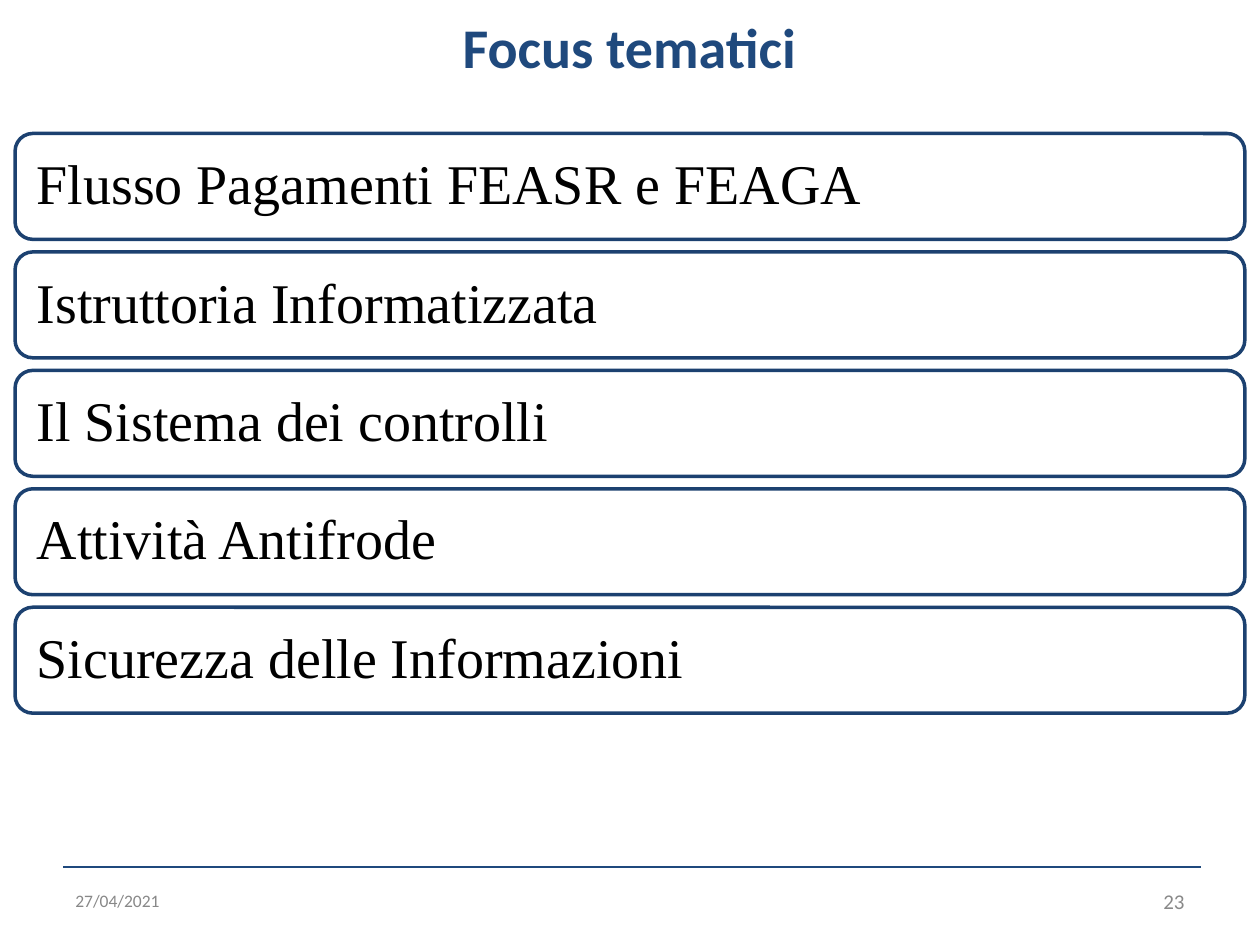
from dataclasses import dataclass

from lxml import etree
from pptx import Presentation
from pptx.dml.color import RGBColor
from pptx.enum.shapes import MSO_CONNECTOR, MSO_SHAPE
from pptx.enum.text import MSO_ANCHOR, MSO_AUTO_SIZE, PP_ALIGN
from pptx.oxml.ns import qn
from pptx.slide import Slide
from pptx.text.text import TextFrame
from pptx.util import Inches, Pt

LEFT, CENTER, RIGHT = PP_ALIGN.LEFT, PP_ALIGN.CENTER, PP_ALIGN.RIGHT
TOP, MIDDLE = MSO_ANCHOR.TOP, MSO_ANCHOR.MIDDLE

BLUE = RGBColor(0x1F, 0x49, 0x7D)
BORDER_BLUE = RGBColor(0x1C, 0x41, 0x70)
DATE_GRAY = RGBColor(0x88, 0x88, 0x88)
NUMBER_GRAY = RGBColor(0x89, 0x89, 0x89)
BLACK = RGBColor(0, 0, 0)
WHITE = RGBColor(0xFF, 0xFF, 0xFF)

TOPICS = [
    "Flusso Pagamenti FEASR e FEAGA",
    "Istruttoria Informatizzata",
    "Il Sistema dei controlli",
    "Attività Antifrode",
    "Sicurezza delle Informazioni",
]
TOPIC_LEFT, TOPIC_TOP = 0.12, 1.06
TOPIC_WIDTH, TOPIC_HEIGHT = 9.76, 0.84
TOPIC_PITCH = 0.94
TOPIC_INSET = 0.13


@dataclass(frozen=True)
class TextStyle:
    size: int
    color: RGBColor
    font: str = "Calibri"
    align: PP_ALIGN = LEFT
    anchor: MSO_ANCHOR = MIDDLE
    bold: bool = False


@dataclass(frozen=True)
class FooterItem:
    text: str
    left: float
    style: TextStyle


TITLE_STYLE = TextStyle(32, BLUE, align=CENTER, anchor=TOP, bold=True)
TOPIC_STYLE = TextStyle(32, BLACK, font="Times New Roman")
FOOTER_ITEMS = [
    FooterItem("27/04/2021", 0.5, TextStyle(10, DATE_GRAY)),
    FooterItem("23", 7.17, TextStyle(12, NUMBER_GRAY, align=RIGHT)),
]


def write_text(frame: TextFrame, text: str, style: TextStyle) -> None:
    frame.text = text
    frame.word_wrap = True
    frame.auto_size = MSO_AUTO_SIZE.NONE
    frame.vertical_anchor = style.anchor
    paragraph = frame.paragraphs[0]
    paragraph.alignment = style.align
    font = paragraph.runs[0].font
    font.name = style.font
    font.size = Pt(style.size)
    font.bold = style.bold
    font.color.rgb = style.color


def add_title(slide: Slide, text: str) -> None:
    title = slide.shapes.title
    title.left, title.top = Inches(0.1), Inches(0.05)
    title.width, title.height = Inches(9.79), Inches(0.81)
    write_text(title.text_frame, text, TITLE_STYLE)


def add_topic(slide: Slide, text: str, top: float) -> None:
    box = slide.shapes.add_shape(
        MSO_SHAPE.ROUNDED_RECTANGLE,
        Inches(TOPIC_LEFT), Inches(top), Inches(TOPIC_WIDTH), Inches(TOPIC_HEIGHT),
    )
    box.shadow.inherit = False
    box.fill.solid()
    box.fill.fore_color.rgb = WHITE
    box.line.color.rgb = BORDER_BLUE
    box.line.width = Pt(2)
    frame = box.text_frame
    frame.margin_left = frame.margin_right = Inches(TOPIC_INSET)
    frame.margin_top = frame.margin_bottom = Inches(TOPIC_INSET)
    write_text(frame, text, TOPIC_STYLE)
    frame.paragraphs[0].line_spacing = 0.9


def add_footer_rule(slide: Slide) -> None:
    rule = slide.shapes.add_connector(
        MSO_CONNECTOR.STRAIGHT, Inches(0.5), Inches(6.88), Inches(9.53), Inches(6.88)
    )
    rule.line.color.rgb = BLUE
    rule.line.width = Pt(1.5)
    etree.SubElement(rule._element.spPr, qn("a:effectLst"))


def add_footer_item(slide: Slide, item: FooterItem) -> None:
    box = slide.shapes.add_textbox(
        Inches(item.left), Inches(6.95), Inches(2.33), Inches(0.4)
    )
    write_text(box.text_frame, item.text, item.style)


def main() -> None:
    presentation = Presentation()
    presentation.slide_width = Inches(10)
    presentation.slide_height = Inches(7.5)
    title_only = presentation.slide_layouts[5]
    slide = presentation.slides.add_slide(title_only)

    add_title(slide, "Focus tematici")
    for row, topic in enumerate(TOPICS):
        add_topic(slide, topic, TOPIC_TOP + row * TOPIC_PITCH)
    add_footer_rule(slide)
    for item in FOOTER_ITEMS:
        add_footer_item(slide, item)

    presentation.save("out.pptx")


if __name__ == "__main__":
    main()
